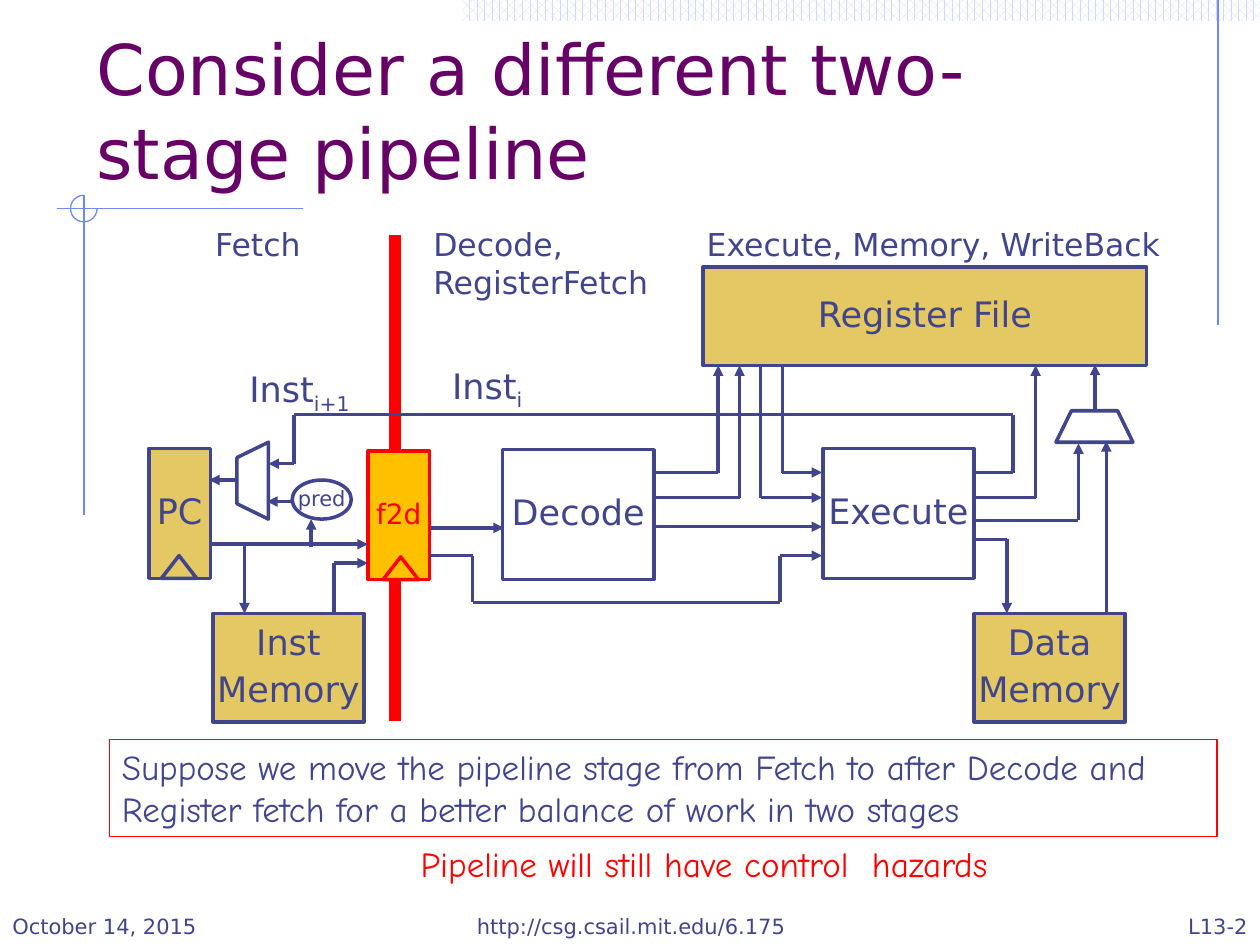
from itertools import pairwise

from pptx import Presentation
from pptx.dml.color import RGBColor
from pptx.enum.dml import MSO_PATTERN
from pptx.enum.shapes import MSO_CONNECTOR, MSO_SHAPE
from pptx.enum.text import MSO_ANCHOR, MSO_AUTO_SIZE, PP_ALIGN
from pptx.oxml.ns import qn
from pptx.util import Pt
from lxml.etree import SubElement

THEME = {
    "ink": RGBColor(0x40, 0x45, 0x8C), "red": RGBColor(255, 0, 0),
    "gold": RGBColor(0xE4, 0xC8, 0x64), "amber": RGBColor(0xFF, 0xC0, 0),
    "plum": RGBColor(0x66, 0, 0x66), "white": RGBColor(255, 255, 255),
    "rule": RGBColor(0x6F, 0x89, 0xF7), "pale": RGBColor(0xCF, 0xDB, 0xFD),
    "sans": "DejaVu Sans", "hand": "Comic Neue",
    "title": Pt(40), "body": Pt(20), "label": Pt(18), "latch": Pt(16), "small": Pt(12),
}
MID = {"vertical_anchor": MSO_ANCHOR.MIDDLE, "word_wrap": False}
LOW = {"vertical_anchor": MSO_ANCHOR.BOTTOM, "word_wrap": True}
GROW = {"auto_size": MSO_AUTO_SIZE.SHAPE_TO_FIT_TEXT, "word_wrap": True}
TIGHT = GROW | {"word_wrap": False}

deck = Presentation()
deck.slide_width, deck.slide_height = Pt(720), Pt(540)
slide = deck.slides.add_slide(deck.slide_layouts[6])


def box(kind, spot, text="", fill=None, line=None, width=2, size="body",
        ink="ink", face="sans", frame=MID, para=None):
    """Add a shape, or a text box if kind is None; "_" starts a subscript."""
    spot = [Pt(v) for v in spot]
    if kind is None:
        item = slide.shapes.add_textbox(*spot)
    else:
        item = slide.shapes.add_shape(kind, *spot)
        item.shadow.inherit = False
        if fill:
            item.fill.solid()
            item.fill.fore_color.rgb = THEME[fill]
        else:
            item.fill.background()
        if line:
            item.line.color.rgb = THEME[line]
            item.line.width = Pt(width)
        else:
            item.line.fill.background()
    if not text:
        return item
    for key, val in frame.items():
        setattr(item.text_frame, key, val)
    for at, row in enumerate(text.split("\n")):
        part = item.text_frame.add_paragraph() if at else item.text_frame.paragraphs[0]
        look = {"alignment": PP_ALIGN.LEFT} | (para or {})
        if at == 0:
            look.pop("space_before", None)
        for key, val in look.items():
            setattr(part, key, val)
        for sub, word in enumerate(row.split("_")):
            run = part.add_run()
            run.text = word
            run.font.color.rgb = THEME[ink]
            for key, val in {"size": THEME[size], "name": THEME[face]}.items():
                setattr(run.font, key, val)
            if sub:
                run.font._element.set("baseline", "-25000")
    return item


def wire(spots, tip=True, ink="ink", width=2):
    """Join the spots with straight lines; the last one may end in an arrow."""
    for start, end in pairwise(spots):
        link = slide.shapes.add_connector(
            MSO_CONNECTOR.STRAIGHT, *[Pt(v) for v in start + end])
        link.line.color.rgb = THEME[ink]
        link.line.width = Pt(width)
        props = link._element.spPr
        if tip and end == spots[-1]:
            SubElement(props.find(qn("a:ln")), qn("a:tailEnd"), type="triangle")
        SubElement(props, qn("a:effectLst"))


# Backdrop: dotted band, rules and open ring
band = box(MSO_SHAPE.RECTANGLE, (264, 0, 456, 12))
band.fill.patterned()
band.fill.pattern = MSO_PATTERN.PERCENT_60
band.fill.fore_color.rgb = THEME["pale"]
band.fill.back_color.rgb = THEME["white"]
for spots in [[(696, 0), (696, 186)], [(173, 119.2), (32.5, 119.2)], [(48, 111.5), (48, 294.5)]]:
    wire(spots, False, "rule", 0.75)
ring = box(MSO_SHAPE.ARC, (40.3, 111.6, 15.2, 15.2), line="rule", width=0.75)
ring.adjustments[0], ring.adjustments[1] = 0, 162

# Title
box(None, (48, 24, 612, 90), "Consider a different two-stage pipeline",
    size="title", ink="plum", frame=LOW)

# Stage divider
box(MSO_SHAPE.RECTANGLE, (222.5, 134.6, 6.5, 277.2), fill="red", line="red", width=0.75)

# Blocks
RECT, OVAL = MSO_SHAPE.RECTANGLE, MSO_SHAPE.OVAL
core = {"alignment": PP_ALIGN.CENTER, "line_spacing": 0.9, "space_before": Pt(5)}
for kind, spot, text, fill, line, size in [
    (RECT, (85, 256.3, 35.3, 74.2), "PC", "gold", "ink", "body"),
    (RECT, (287.3, 257, 86.4, 74.2), "Decode", None, "ink", "body"),
    (RECT, (401.8, 152.6, 253.4, 56.2), "Register File", "gold", "ink", "body"),
    (RECT, (470.2, 256.3, 86.4, 74.2), "Execute", None, "ink", "body"),
    (RECT, (556.6, 350.6, 86.4, 61.9), "Data\nMemory", "gold", "ink", "body"),
    (RECT, (121.7, 350.6, 86.4, 61.9), "Inst\nMemory", "gold", "ink", "body"),
    (OVAL, (167, 274.3, 33.8, 22.3), "pred", None, "ink", "small"),
    (RECT, (210.2, 257.8, 35.3, 73.4), "f2d", "amber", "red", "latch"),
]:
    box(kind, spot, text, fill, line, size=size, ink=line, para=core)

# Muxes and clock marks
for left, top, turn in [(603.4, 234.7, 180), (122.4, 265.7, 90)]:
    mux = box(MSO_SHAPE.FLOWCHART_MANUAL_OPERATION, (left, top, 44, 18), fill="white", line="ink")
    mux.rotation = turn
for left, top, line in [(92.2, 317.5, "ink"), (218.9, 318.2, "red")]:
    box(MSO_SHAPE.ISOSCELES_TRIANGLE, (left, top, 20.2, 13), line=line)

# Wires
for spots in [
    # Fetch
    [(120.2, 311), (210.2, 311)],
    [(139.7, 311), (139.7, 350.6)],
    [(190.8, 350), (190.8, 321.8), (210.2, 321.8)],
    [(177.8, 312.5), (177.8, 296.6)],
    [(167, 286.6), (152.6, 286.6)],
    [(135.4, 274.3), (119.5, 274.3)],
    # Latch to Decode and Execute
    [(246.2, 301.7), (288, 301.7)],
    [(245.5, 317.5), (270, 317.5), (270, 344.2), (445.7, 344.2), (445.7, 317.5), (469.8, 317.5)],
    # Decode
    [(373.7, 301), (469.8, 301)],
    [(373.7, 270), (410.4, 270), (410.4, 208.8)],
    [(373.7, 284.4), (422.6, 284.4), (422.6, 208.8)],
    # Register reads
    [(447.1, 208.8), (447.1, 270), (469.8, 270)],
    [(434.6, 208.8), (434.6, 284.4), (469.8, 284.4)],
    # Execute
    [(556.6, 270), (578.9, 270), (578.9, 236.9), (168, 236.9), (168, 265), (153.4, 265)],
    [(556.6, 284.4), (591.8, 284.4), (591.8, 208.8)],
    [(556.6, 297.4), (616.3, 297.4), (616.3, 253.4)],
    [(556.6, 308.2), (575.3, 308.2), (575.3, 350.6)],
    # Write back
    [(632.2, 350), (632.2, 252)],
    [(625.7, 234), (625.7, 208.4)],
]:
    wire(spots)

# Stage and instruction labels
for spot, text, size, frame in [
    ((115.9, 125.3, 63.4, 28.8), "Fetch", "label", TIGHT),
    ((240.5, 125.3, 137.5, 51.1), "Decode,\nRegisterFetch", "label", GROW),
    ((396.7, 125.3, 281.5, 28.8), "Execute, Memory, WriteBack", "label", GROW),
    ((251.3, 204.5, 57.6, 31.7), "Inst_i", "body", TIGHT),
    ((135.4, 206.6, 77, 31.7), "Inst_i+1", "body", TIGHT),
]:
    box(None, spot, text, size=size, frame=frame)

# Remarks
box(RECT, (62.6, 422.6, 632.9, 55.4),
    "Suppose we move the pipeline stage from Fetch to after Decode and "
    "Register fetch for a better balance of work in two stages",
    line="red", width=0.75, face="hand", frame=GROW | {"vertical_anchor": MSO_ANCHOR.TOP})
box(None, (233.3, 478.1, 421.9, 31.7), "Pipeline will still have control  hazards",
    ink="red", face="hand", frame=GROW)

# Footer
for left, width, text, side in [
    (0, 150, "October 14, 2015", PP_ALIGN.LEFT),
    (241.9, 237.6, "http://csg.csail.mit.edu/6.175", PP_ALIGN.CENTER),
    (570, 150, "L13-2", PP_ALIGN.RIGHT),
]:
    box(None, (left, 504, width, 36), text, size="small", frame=LOW, para={"alignment": side})

deck.save("out.pptx")
